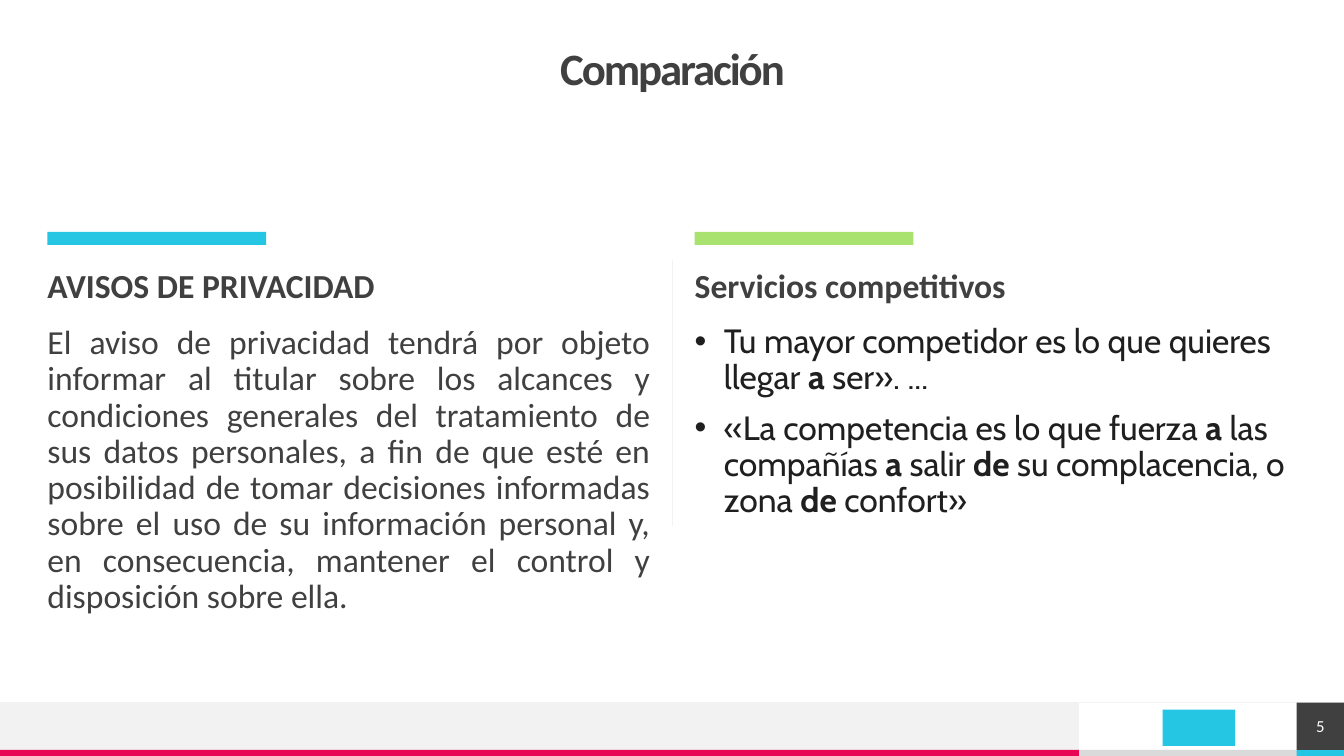
"""Build a two-column comparison slide with a coloured footer."""
from typing import NamedTuple

from lxml import etree
from pptx import Presentation
from pptx import util as u
from pptx.dml.color import RGBColor
from pptx.enum import shapes, text
from pptx.oxml import ns

CYAN = RGBColor(0x25, 0xC6, 0xE3)
GREEN = RGBColor(0xA9, 0xE2, 0x6F)
PINK = RGBColor(0xE8, 0x05, 0x54)
DARK = RGBColor(0x40, 0x40, 0x40)
INK = RGBColor(0x1F, 0x1F, 0x1F)
SILVER = RGBColor(0xDA, 0xDA, 0xDA)
PALE = RGBColor(0xF2, 0xF2, 0xF2)
WHITE = RGBColor(0xFF, 0xFF, 0xFF)

WIDTH, HEIGHT = 13.33, 7.5
MARGIN, COLUMN_WIDTH = 0.47, 5.98
FOOTER_TOP, STRIPE_TOP = 6.97, 7.44
FOOTER_SPLIT, NUMBER_LEFT = 10.7, 12.86


class Bar(NamedTuple):
    """A filled rectangle, in inches."""
    left: float
    top: float
    width: float
    height: float
    color: RGBColor


class Rule(NamedTuple):
    """A thin straight line, in inches."""
    x1: float
    y1: float
    x2: float
    y2: float


class Column(NamedTuple):
    """One side of the comparison; odd pieces of a paragraph are bold."""
    left: float
    color: RGBColor
    heading: str
    heading_idx: int
    body_idx: int
    body_top: float
    body_height: float
    paragraphs: list[list[str]]
    body_format: dict


COLUMNS = [
    Column(MARGIN, CYAN, "AVISOS DE PRIVACIDAD", 1, 2, 3.23, 3.3,
           [["El aviso de privacidad tendrá por objeto informar al titular sobre los "
             "alcances y condiciones generales del tratamiento de sus datos personales, "
             "a fin de que esté en posibilidad de tomar decisiones informadas sobre el "
             "uso de su información personal y, en consecuencia, mantener el control y "
             "disposición sobre ella."]],
           {"align": text.PP_ALIGN.JUSTIFY}),
    Column(6.89, GREEN, "Servicios competitivos", 3, 4, 3.22, 2.4,
           [["Tu mayor competidor es lo que quieres llegar ", "a", " ser». ..."],
            ["«La competencia es lo que fuerza ", "a", " las compañías ", "a",
             " salir ", "de", " su complacencia, o zona ", "de", " confort»"]],
           {"font": "Cabin", "color": INK, "bullet": True}),
]

FOOTER = [
    Bar(FOOTER_SPLIT, STRIPE_TOP, 2.17, 0.06, SILVER),
    Bar(0, FOOTER_TOP, FOOTER_SPLIT, 0.47, PALE),
    Bar(0, STRIPE_TOP, FOOTER_SPLIT, 0.06, PINK),
    Bar(NUMBER_LEFT, STRIPE_TOP, 0.47, 0.06, CYAN),
    Bar(11.53, 7.04, 0.72, 0.36, CYAN),
]
RULES = [Rule(WIDTH, FOOTER_TOP, 0, FOOTER_TOP), Rule(6.67, 2.58, 6.67, 5.22)]


def set_bullet(p, bullet: bool) -> None:
    """Give a paragraph a hanging bullet, or none."""
    pPr = p._p.get_or_add_pPr()
    indent = u.Inches(0.29) if bullet else 0
    pPr.set("marL", str(indent))
    pPr.set("indent", str(-indent))
    if bullet:
        etree.SubElement(pPr, ns.qn("a:buFont")).set("typeface", "Arial")
        etree.SubElement(pPr, ns.qn("a:buChar")).set("char", "•")
    else:
        etree.SubElement(pPr, ns.qn("a:buNone"))


def write(sp, paragraphs: list[list[str]], *, size: float = 24, font: str = "Calibri",
          color: RGBColor = DARK, bold: bool = False, align=text.PP_ALIGN.LEFT,
          anchor=text.MSO_ANCHOR.TOP, bullet: bool = False, line: float = 0.9,
          tracking: float = 0) -> None:
    """Fill a shape with paragraphs whose odd pieces are bold."""
    tf = sp.text_frame
    tf.word_wrap = True
    tf.auto_size = text.MSO_AUTO_SIZE.NONE
    tf.vertical_anchor = anchor
    tf.margin_left = tf.margin_top = tf.margin_right = tf.margin_bottom = 0
    for i, pieces in enumerate(paragraphs):
        p = tf.add_paragraph() if i else tf.paragraphs[0]
        set_bullet(p, bullet)
        p.alignment = align
        p.line_spacing = line
        p.space_before = u.Pt(10 if i else 0)
        for j, piece in enumerate(pieces):
            r = p.add_run()
            r.text = piece
            r.font.size = u.Pt(size)
            r.font.name = font
            r.font.bold = bold or j % 2 == 1
            r.font.color.rgb = color
            if tracking:
                r._r.get_or_add_rPr().set("spc", str(round(tracking * 100)))


def place(sp, left: float, top: float, width: float, height: float) -> None:
    """Move and size a shape."""
    sp.left, sp.top = u.Inches(left), u.Inches(top)
    sp.width, sp.height = u.Inches(width), u.Inches(height)


def draw_bar(s, bar: Bar):
    """Draw a borderless filled rectangle."""
    sp = s.shapes.add_shape(shapes.MSO_SHAPE.RECTANGLE, *map(u.Inches, bar[:4]))
    sp.shadow.inherit = False
    sp.fill.solid()
    sp.fill.fore_color.rgb = bar.color
    sp.line.fill.background()
    return sp


def draw_rule(s, rule: Rule) -> None:
    """Draw a pale hairline."""
    sp = s.shapes.add_connector(shapes.MSO_CONNECTOR.STRAIGHT, *map(u.Inches, rule))
    sp.line.color.rgb = PALE
    sp.line.width = u.Pt(0.5)
    etree.SubElement(sp._element.spPr, ns.qn("a:effectLst"))


def draw_column(s, column: Column) -> None:
    """Draw a column's accent bar, heading and body."""
    draw_bar(s, Bar(column.left, 2.3, 2.17, 0.13, column.color))
    heading = s.placeholders[column.heading_idx]
    place(heading, column.left, 2.67, COLUMN_WIDTH, 0.39)
    write(heading, [[column.heading]], bold=True)
    body = s.placeholders[column.body_idx]
    place(body, column.left, column.body_top, COLUMN_WIDTH, column.body_height)
    write(body, column.paragraphs, **column.body_format)


def main() -> None:
    """Build and save the slide."""
    prs = Presentation()
    prs.slide_width, prs.slide_height = u.Inches(WIDTH), u.Inches(HEIGHT)
    s = prs.slides.add_slide(prs.slide_layouts.get_by_name("Comparison"))
    s.background.fill.solid()
    s.background.fill.fore_color.rgb = WHITE

    for bar in FOOTER:
        draw_bar(s, bar)
    for rule in RULES:
        draw_rule(s, rule)

    centred = {"align": text.PP_ALIGN.CENTER, "anchor": text.MSO_ANCHOR.MIDDLE}
    title = s.shapes.title
    place(title, MARGIN, 0.47, 12.4, 0.47)
    write(title, [["Comparación"]], size=32, bold=True, tracking=-1.5, **centred)
    for column in COLUMNS:
        draw_column(s, column)

    number = draw_bar(s, Bar(NUMBER_LEFT, FOOTER_TOP, 0.47, 0.47, DARK))
    write(number, [["5"]], size=12, color=WHITE, line=1.0, **centred)
    prs.save("out.pptx")


if __name__ == "__main__":
    main()
